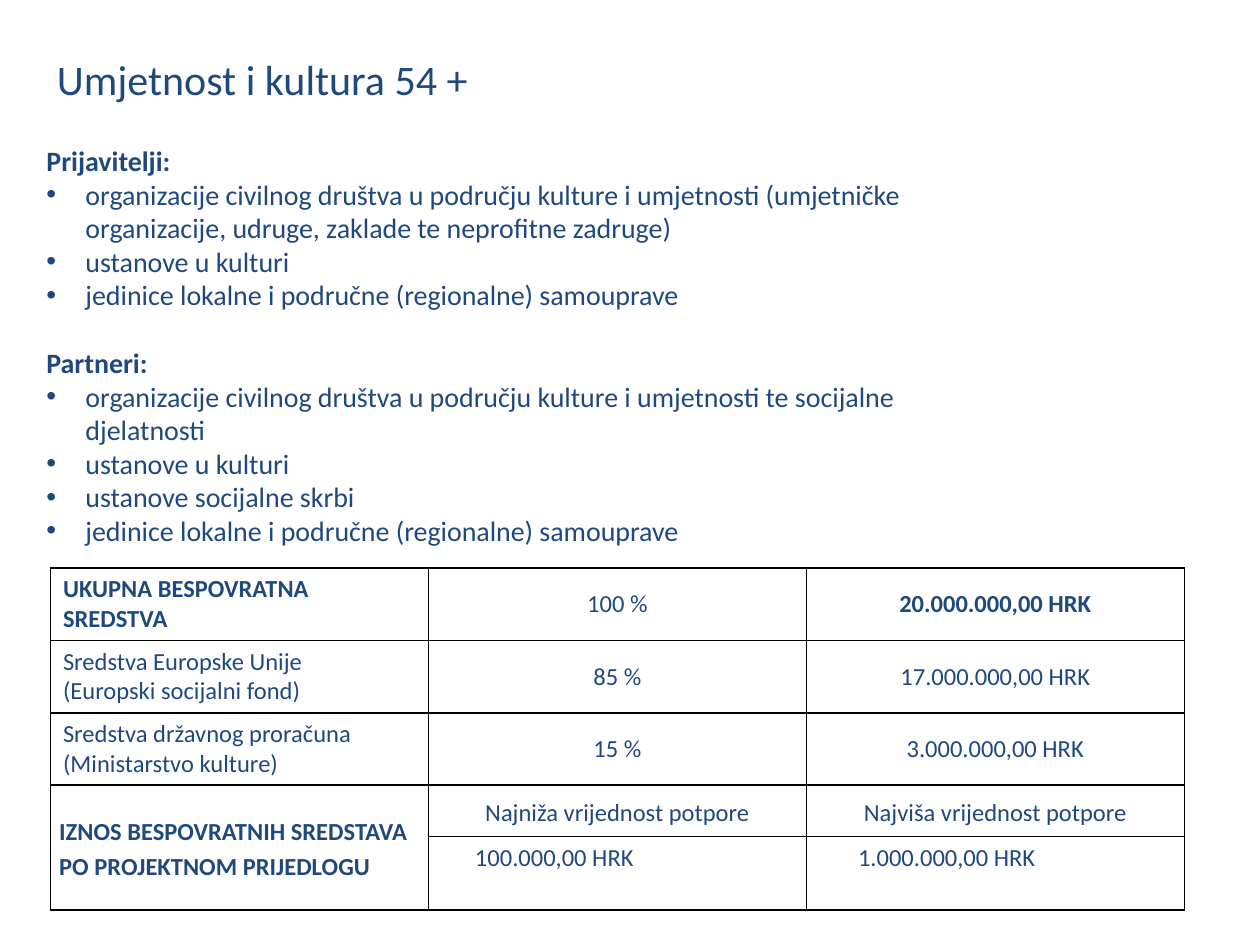
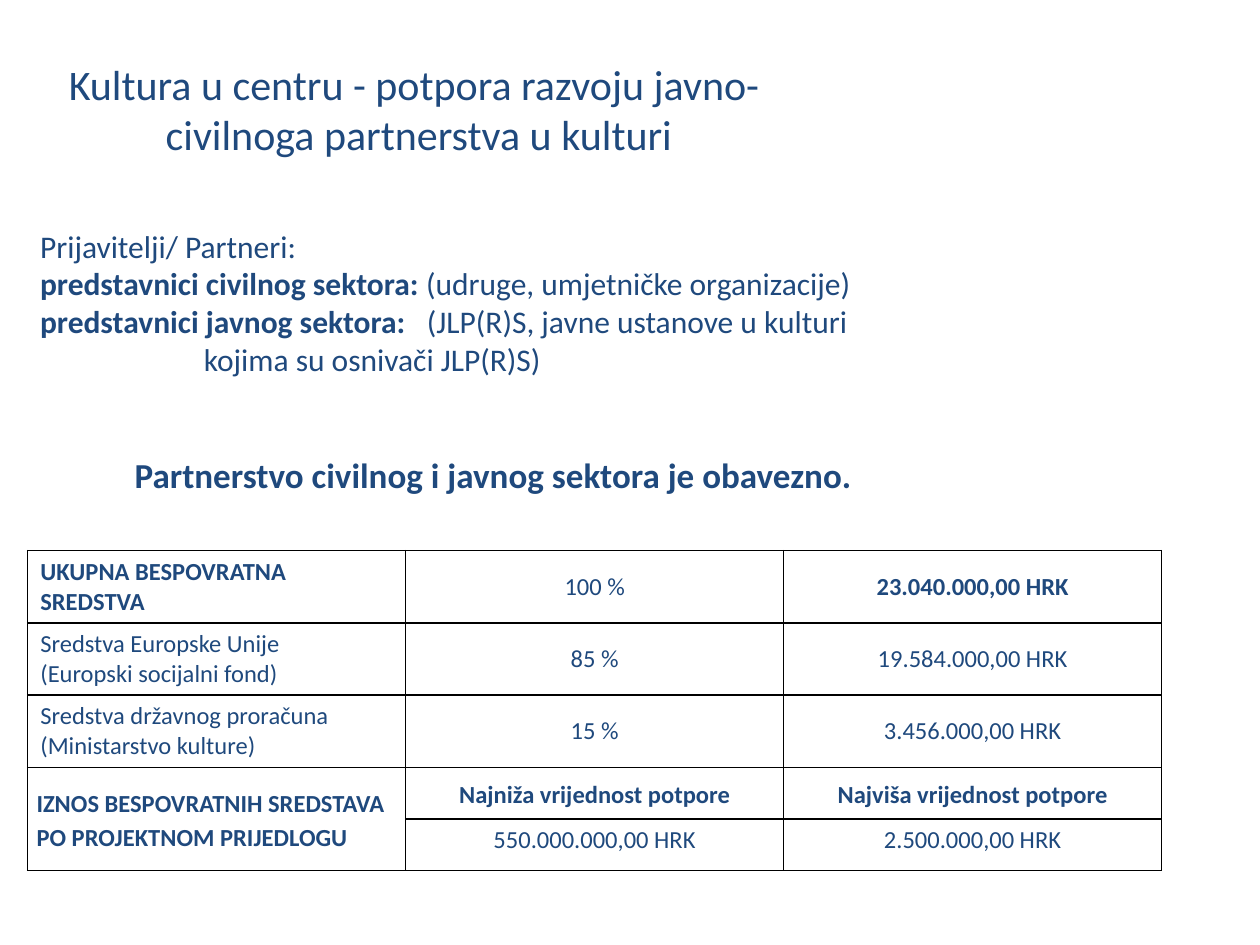
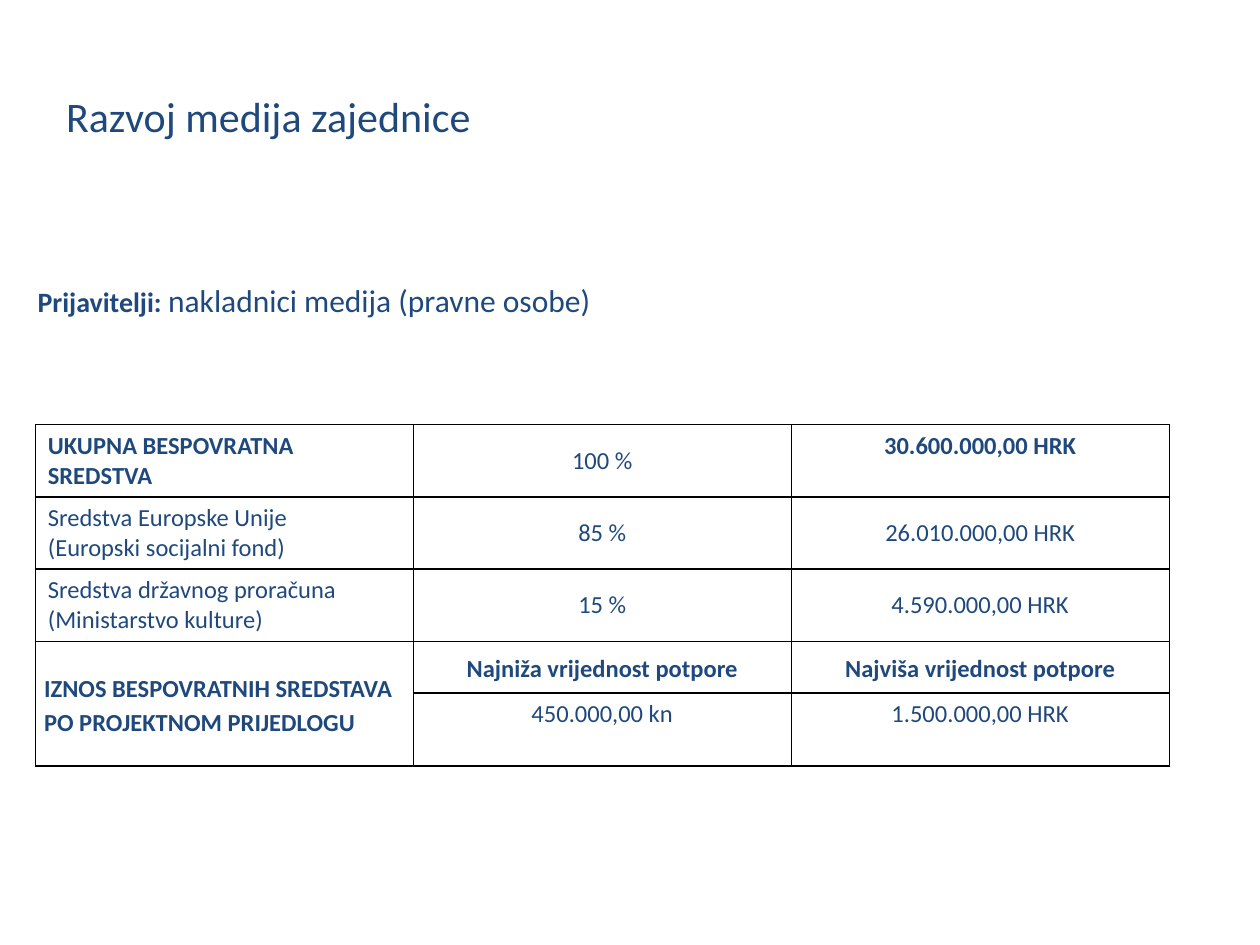
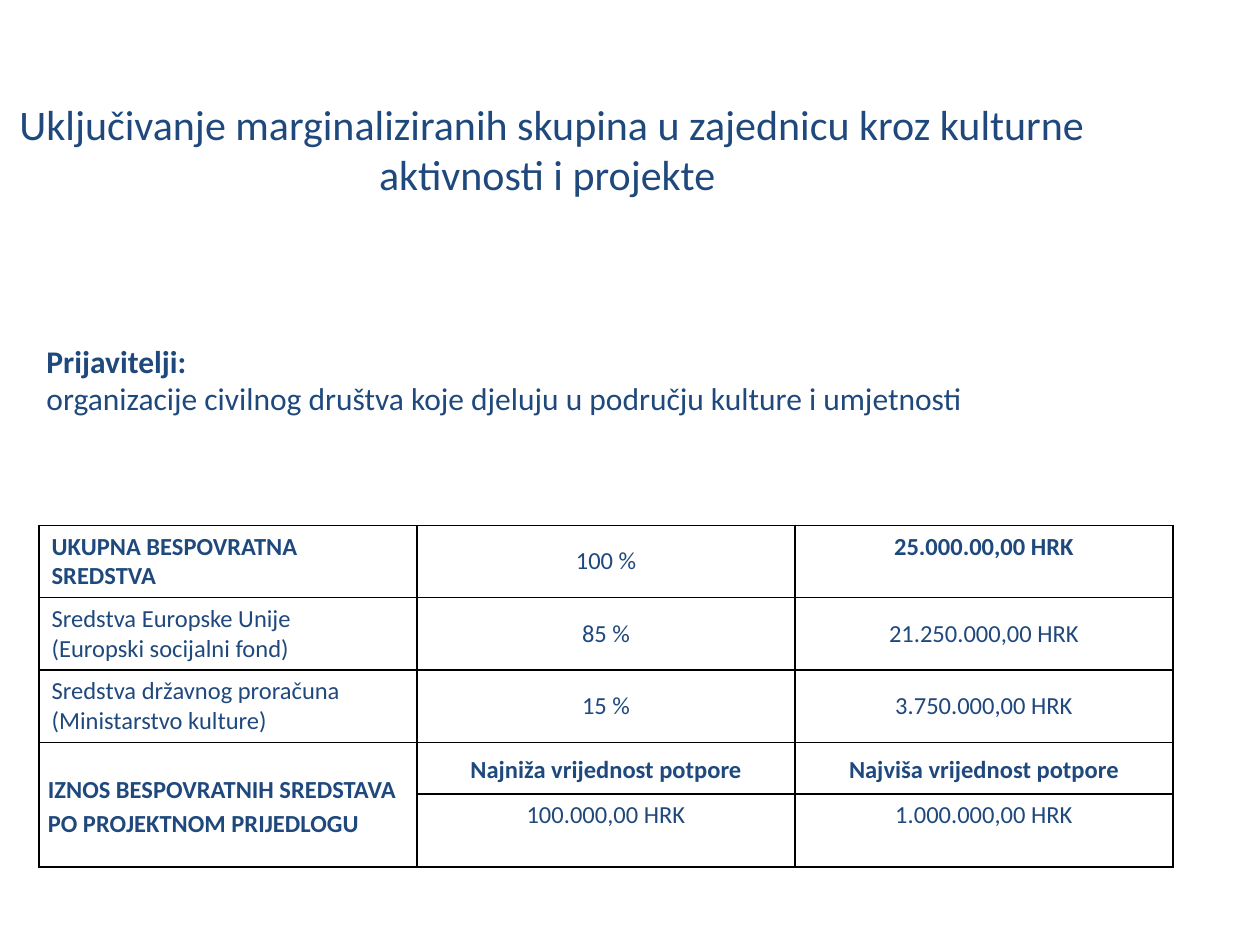
import pptx
import pptx.dml.color
import pptx.enum.text
import pptx.oxml
import pptx.oxml.ns
import pptx.util
from dataclasses import dataclass

# Shared style: the slide is a grid of 100 columns by 75 rows
SLIDE_WIDTH = pptx.util.Inches(10)
SLIDE_HEIGHT = pptx.util.Inches(7.5)
COLUMN = SLIDE_WIDTH / 100
ROW = SLIDE_HEIGHT / 75
FONT = "Calibri"
NAVY = "1F497D"
BLACK = "000000"
TITLE_SIZE = 24
TABLE_SIZE = 14
LINE_HEIGHT = 1.22

Align = pptx.enum.text.PP_ALIGN
Anchor = pptx.enum.text.MSO_ANCHOR
AutoSize = pptx.enum.text.MSO_AUTO_SIZE


@dataclass
class Line:
    """One body paragraph: (text, bold) runs and their layout."""
    runs: list
    size: float = 18
    bullet: bool = False
    before: float = 0
    indent: float = 0
    tabs: tuple = ()


def color(value):
    return pptx.dml.color.RGBColor.from_string(value)


def columns(count):
    return round(count * COLUMN)


def rows(count):
    return round(count * ROW)


def place(box):
    left, top, width, height = box
    return columns(left), rows(top), columns(width), rows(height)


def style(font, size, bold=False):
    font.name = FONT
    font.size = pptx.util.Pt(size)
    font.bold = bold
    font.color.rgb = color(NAVY)


def add_xml(parent, xml, index=None):
    tag, rest = xml.split(" ", 1)
    element = pptx.oxml.parse_xml(f"{tag} {pptx.oxml.ns.nsdecls('a')} {rest}")
    parent.insert(len(parent) if index is None else index, element)


# Title
def add_title(slide, text, box, lines_below):
    title = slide.shapes.title
    title.left, title.top, title.width, title.height = place(box)
    frame = title.text_frame
    frame.text = text
    frame.word_wrap = True
    frame.auto_size = AutoSize.NONE
    frame.vertical_anchor = Anchor.MIDDLE
    frame.margin_bottom += pptx.util.Pt(lines_below * TITLE_SIZE * LINE_HEIGHT)
    paragraph = frame.paragraphs[0]
    paragraph.alignment = Align.CENTER
    style(paragraph.font, TITLE_SIZE)


# Body text
def fill_line(paragraph, line):
    properties = paragraph._p.get_or_add_pPr()
    if line.before:
        paragraph.space_before = pptx.util.Pt(line.before)
    if line.indent:
        properties.set("marL", str(columns(line.indent)))
    if line.bullet:
        properties.set("marL", str(columns(3.1)))
        properties.set("indent", str(-columns(3.1)))
        add_xml(properties, '<a:buFont typeface="Arial"/>')
        add_xml(properties, '<a:buChar char="•"/>')
    if line.tabs:
        stops = "".join(f'<a:tab pos="{columns(tab)}" algn="l"/>' for tab in line.tabs)
        add_xml(properties, f"<a:tabLst >{stops}</a:tabLst>")
    style(paragraph.font, line.size, line.runs[0][1])
    for text, bold, *size in line.runs:
        for number, part in enumerate(text.split("\v")):
            if number:
                paragraph.add_line_break()
            run = paragraph.add_run()
            run.text = part
            if len(line.runs) > 1:
                style(run.font, size[0] if size else line.size, bold)


def add_body(slide, lines, box, anchor=Anchor.TOP):
    frame = slide.shapes.add_textbox(*place(box)).text_frame
    frame.word_wrap = True
    frame.auto_size = AutoSize.SHAPE_TO_FIT_TEXT
    frame.vertical_anchor = anchor
    for number, line in enumerate(lines):
        fill_line(frame.add_paragraph() if number else frame.paragraphs[0], line)


# Funding table
def set_borders(cell):
    properties = cell._tc.get_or_add_tcPr()
    for index, side in enumerate(("lnL", "lnR", "lnT", "lnB")):
        add_xml(properties, f'<a:{side} w="12700"><a:solidFill><a:srgbClr val="{BLACK}"/>'
                            f'</a:solidFill></a:{side}>', index)


def fill_cell(cell, text, bold=False, alignment=Align.CENTER, anchor=Anchor.MIDDLE, tight=False):
    cell.text = text
    cell.vertical_anchor = anchor
    if tight:
        cell.margin_left = cell.margin_right = columns(0.7)
        cell.margin_top = cell.margin_bottom = 0
    for paragraph in cell.text_frame.paragraphs:
        paragraph.alignment = alignment
        if tight:
            paragraph.line_spacing = 1.15
        style(paragraph.font, TABLE_SIZE, bold)


def add_funding_table(slide, left, top, amounts, limits, last_row=5.8, total_anchor=Anchor.MIDDLE,
                      bold_heads=True, limit_margins=None):
    row_heights = (5.7, 5.7, 5.7, 4.1, last_row)
    box = (left, top, 90, sum(row_heights))
    table = slide.shapes.add_table(5, 3, *place(box)).table
    table.first_row = table.horz_banding = False
    for column in table.columns:
        column.width = columns(30)
    for row, height in zip(table.rows, row_heights):
        row.height = rows(height)
    for cell in table.iter_cells():
        cell.fill.background()
        set_borders(cell)

    # Sources of funds
    sources = ("UKUPNA BESPOVRATNA SREDSTVA",
               "Sredstva Europske Unije\n(Europski socijalni fond)",
               "Sredstva državnog proračuna\n(Ministarstvo kulture)")
    shares = ("100 %", "85 %", "15 %")
    for number, (source, share, amount) in enumerate(zip(sources, shares, amounts)):
        total = number == 0
        fill_cell(table.cell(number, 0), source, total, Align.LEFT)
        fill_cell(table.cell(number, 1), share)
        fill_cell(table.cell(number, 2), amount, total,
                  anchor=total_anchor if total else Anchor.MIDDLE)

    # Lowest and highest grant
    table.cell(3, 0).merge(table.cell(4, 0))
    fill_cell(table.cell(3, 0), "IZNOS BESPOVRATNIH SREDSTAVA PO PROJEKTNOM PRIJEDLOGU",
              True, Align.LEFT, tight=True)
    heads = ("Najniža vrijednost potpore", "Najviša vrijednost potpore")
    for number, (head, limit) in enumerate(zip(heads, limits)):
        fill_cell(table.cell(3, number + 1), head, bold_heads, tight=True)
        cell = table.cell(4, number + 1)
        fill_cell(cell, limit, alignment=Align.LEFT if limit_margins else Align.CENTER,
                  anchor=Anchor.TOP)
        if limit_margins:
            cell.margin_left = columns(limit_margins[number])


def heading(text, **layout):
    return Line([(text, True)], **layout)


def bullets(*texts):
    return [Line([(text, False)], size=16, bullet=True) for text in texts]


def new_slide(presentation, title, box, lines_below=1):
    slide = presentation.slides.add_slide(presentation.slide_layouts[5])
    add_title(slide, title, box, lines_below)
    return slide


def build_arts_slide(presentation):
    slide = new_slide(presentation, "Umjetnost i kultura 54 + ", (-23.3, 0, 89, 12.5), 0)
    add_funding_table(slide, 4, 45.1,
                      ("20.000.000,00 HRK", "17.000.000,00 HRK", "3.000.000,00 HRK"),
                      ("100.000,00 HRK", "1.000.000,00 HRK"),
                      bold_heads=False, limit_margins=(3.7, 4.1))
    institutions = "ustanove u kulturi"
    authorities = "jedinice lokalne i područne (regionalne) samouprave"
    organisations = "organizacije civilnog društva u području kulture i umjetnosti "
    add_body(slide, [
        heading("Prijavitelji:", size=16),
        *bullets(organisations + "(umjetničke organizacije, udruge, zaklade te neprofitne zadruge)",
                 institutions, authorities),
        heading("Partneri:", size=16, before=16 * LINE_HEIGHT),
        *bullets(organisations + "te socijalne djelatnosti",
                 institutions, "ustanove socijalne skrbi", authorities),
    ], (2.7, 10.9, 72.9, 38.4))


def build_partnership_slide(presentation):
    slide = new_slide(presentation,
                      "Kultura u centru - potpora razvoju javno- \vcivilnoga partnerstva u kulturi",
                      (-11.3, 4.4, 89.1, 12.5))
    add_funding_table(slide, 2.2, 43.7,
                      ("23.040.000,00 HRK", "19.584.000,00 HRK", "3.456.000,00 HRK"),
                      ("550.000.000,00 HRK", "2.500.000,00 HRK"), last_row=4.1)
    add_body(slide, [
        Line([("Prijavitelji/ Partneri:", False)]),
        Line([("predstavnici civilnog sektora: ", True),
              ("(udruge, umjetničke organizacije)", False)]),
        Line([("predstavnici javnog sektora:", True),
              ("\t(JLP(R)S, javne ustanove u kulturi\v\tkojima su osnivači JLP(R)S)", False)],
             tabs=(13, 30.7)),
        heading("Partnerstvo civilnog i javnog sektora je obavezno.",
                size=20, before=43, indent=7.5),
    ], (2.2, 17.5, 79.4, 22.6))


def build_media_slide(presentation):
    slide = new_slide(presentation, "Razvoj medija zajednice", (-23.7, 5, 90, 12.5))
    add_funding_table(slide, 2.8, 33.7,
                      ("30.600.000,00 HRK", "26.010.000,00 HRK", "4.590.000,00 HRK"),
                      ("450.000,00 kn", "1.500.000,00 HRK"), total_anchor=Anchor.TOP)
    add_body(slide, [
        Line([("Prijavitelji: ", True, 16), ("nakladnici medija (pravne osobe)", False)]),
    ], (2, 21.8, 72.8, 4))


def build_inclusion_slide(presentation):
    slide = new_slide(presentation,
                      "Uključivanje marginaliziranih skupina u zajednicu kroz kulturne "
                      "aktivnosti i projekte ", (-1.8, 7.6, 91.2, 12.5))
    add_funding_table(slide, 3.1, 41.7,
                      ("25.000.00,00 HRK", "21.250.000,00 HRK", "3.750.000,00 HRK"),
                      ("100.000,00 HRK", "1.000.000,00 HRK"), total_anchor=Anchor.TOP)
    add_body(slide, [
        heading("Prijavitelji:"),
        Line([("organizacije civilnog društva koje djeluju u području kulture i umjetnosti", False)]),
    ], (2.7, 20.4, 89.9, 13.2), Anchor.BOTTOM)


def main():
    presentation = pptx.Presentation()
    presentation.slide_width = SLIDE_WIDTH
    presentation.slide_height = SLIDE_HEIGHT
    build_arts_slide(presentation)
    build_partnership_slide(presentation)
    build_media_slide(presentation)
    build_inclusion_slide(presentation)
    presentation.save("out.pptx")


if __name__ == "__main__":
    main()
